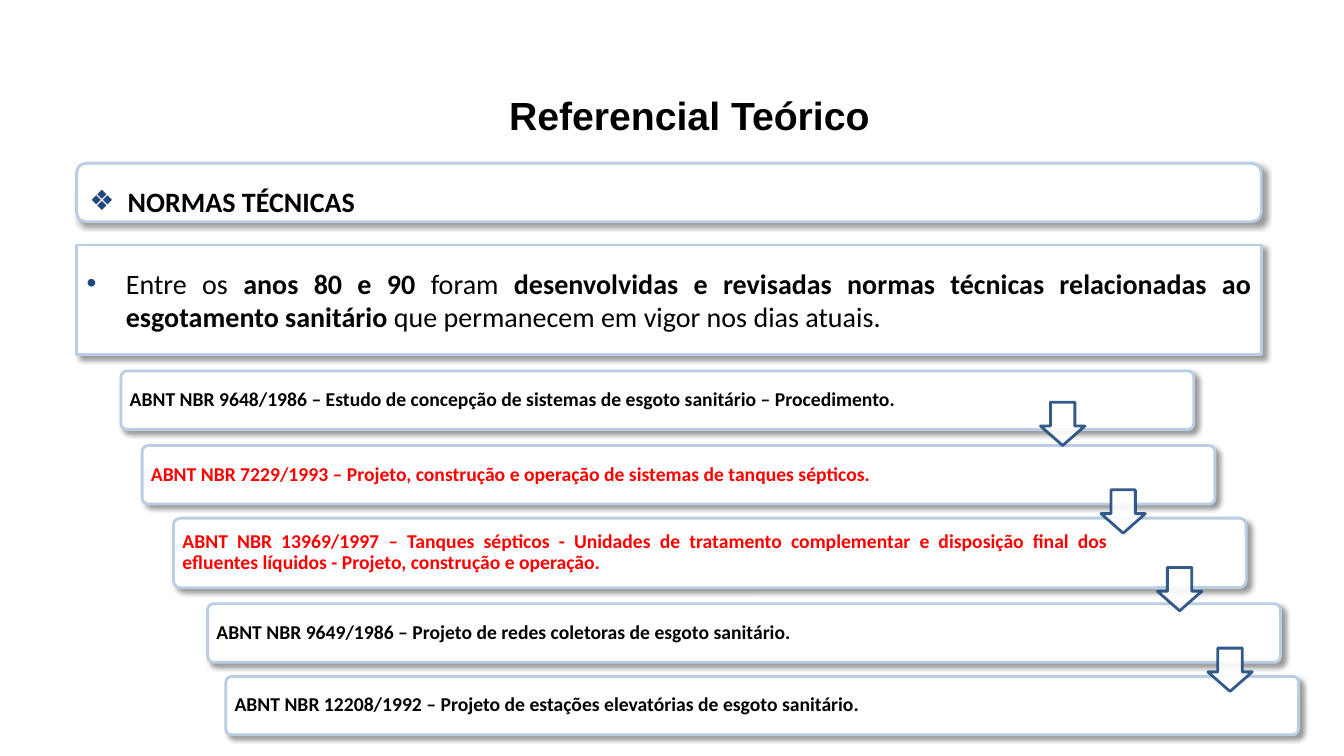
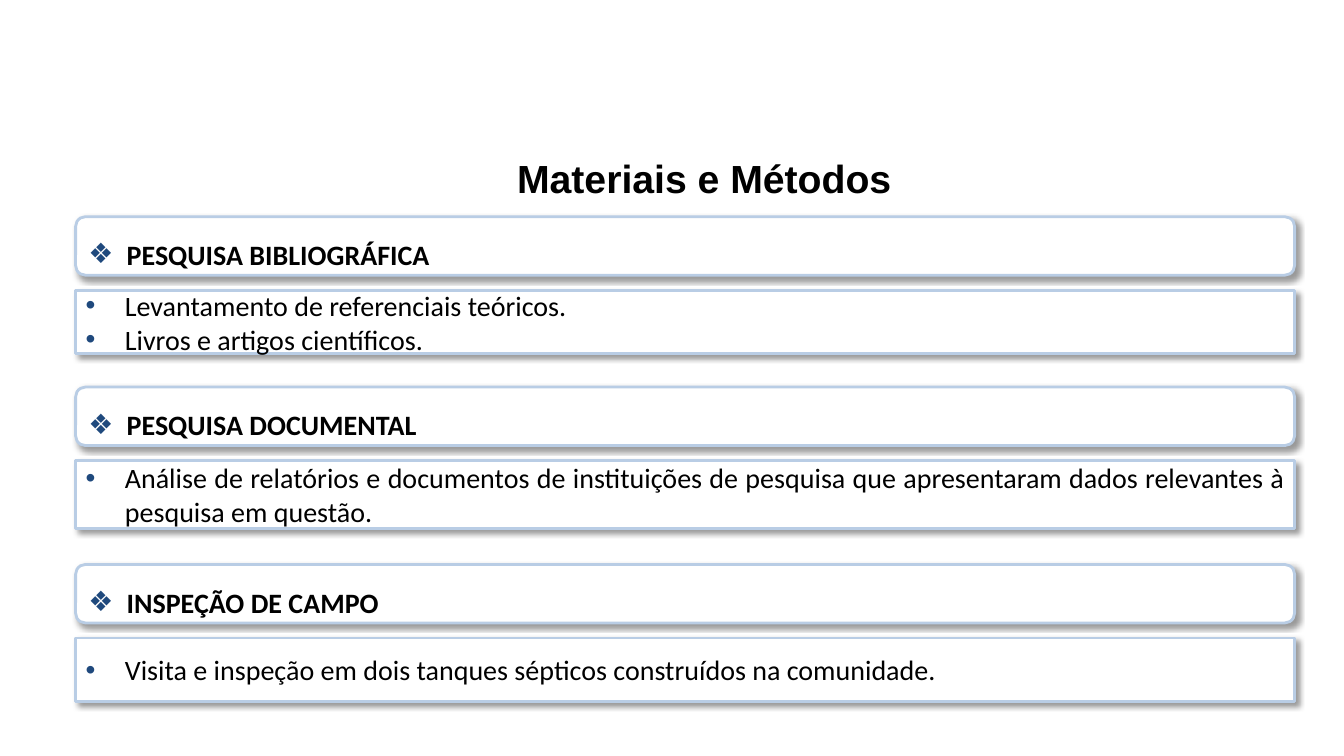
from lxml.etree import SubElement
from pptx import Presentation
from pptx.dml.color import RGBColor
from pptx.enum.shapes import MSO_SHAPE
from pptx.enum.text import MSO_ANCHOR, MSO_AUTO_SIZE, PP_ALIGN
from pptx.oxml.ns import qn
from pptx.util import Inches, Pt

BLACK, WHITE, RED = "000000", "FFFFFF", "FF0000"
NAVY, PALE_BLUE = "1F497D", "B9CDE5"
HEADING_HEIGHT = 0.58
CARD_WIDTH = 10.64

# left, top, height, colour, text
STANDARDS = [
    (1.2, 3.68, 0.58, BLACK,
     "ABNT NBR 9648/1986 – Estudo de concepção de sistemas de esgoto sanitário – Procedimento."),
    (1.41, 4.42, 0.58, RED,
     "ABNT NBR 7229/1993 – Projeto, construção e operação de sistemas de tanques sépticos."),
    (1.72, 5.14, 0.69, RED,
     "ABNT NBR 13969/1997 – Tanques sépticos - Unidades de tratamento complementar e "
     "disposição final dos efluentes líquidos - Projeto, construção e operação."),
    (2.06, 5.99, 0.58, BLACK,
     "ABNT NBR 9649/1986 – Projeto de redes coletoras de esgoto sanitário."),
    (2.24, 6.71, 0.58, BLACK,
     "ABNT NBR 12208/1992 – Projeto de estações elevatórias de esgoto sanitário."),
]
ARROWS = [(10.32, 3.99), (10.92, 4.86), (11.48, 5.63), (11.98, 6.43)]

# top, body height, heading, body paragraphs
METHODS = [
    (2.15, 0.63, "PESQUISA BIBLIOGRÁFICA",
     ["Levantamento de referenciais teóricos.", "Livros e artigos científicos."]),
    (3.84, 0.67, "PESQUISA DOCUMENTAL",
     ["Análise de relatórios e documentos de instituições de pesquisa que "
      "apresentaram dados relevantes à pesquisa em questão."]),
    (5.6, 0.63, "INSPEÇÃO DE CAMPO",
     ["Visita e inspeção em dois tanques sépticos construídos na comunidade."]),
]


def rgb(color):
    return RGBColor.from_string(color)


def set_font(paragraph, size, color=BLACK, bold=False, name="Calibri"):
    font = paragraph.font
    font.name, font.size, font.bold = name, Pt(size), bold
    font.color.rgb = rgb(color)


def set_bullet(paragraph, char, indent):
    properties = paragraph._p.get_or_add_pPr()
    properties.set("marL", str(Inches(indent)))
    properties.set("indent", str(-Inches(indent)))
    bullet_color = SubElement(properties, qn("a:buClr"))
    SubElement(bullet_color, qn("a:srgbClr"), val=NAVY)
    SubElement(properties, qn("a:buFont"), typeface="Arial")
    SubElement(properties, qn("a:buChar"), char=char)


def add_outlined(slide, kind, left, top, width, height, line_color):
    shape = slide.shapes.add_shape(
        kind, Inches(left), Inches(top), Inches(width), Inches(height))
    shape.fill.solid()
    shape.fill.fore_color.rgb = rgb(WHITE)
    shape.line.color.rgb = rgb(line_color)
    shape.line.width = Pt(2)
    shape.shadow.inherit = False
    return shape


def add_panel(slide, kind, left, top, width, height):
    """White panel with a pale blue outline and a soft drop shadow."""
    panel = add_outlined(slide, kind, left, top, width, height, PALE_BLUE)
    effects = panel._element.spPr.find(qn("a:effectLst"))
    shadow = SubElement(effects, qn("a:outerShdw"), blurRad=str(Pt(4)),
                        dist=str(Pt(3)), dir=str(45 * 60000),
                        algn="tl", rotWithShape="0")
    shadow_color = SubElement(shadow, qn("a:srgbClr"), val=BLACK)
    SubElement(shadow_color, qn("a:alpha"), val="40000")
    panel.text_frame.word_wrap = True
    panel.text_frame.vertical_anchor = MSO_ANCHOR.MIDDLE
    return panel


def add_title(slide, left, top, width, text):
    title = slide.shapes.add_textbox(
        Inches(left), Inches(top), Inches(width), Inches(0.57))
    frame = title.text_frame
    frame.word_wrap = False
    frame.auto_size = MSO_AUTO_SIZE.SHAPE_TO_FIT_TEXT
    frame.text = text
    set_font(frame.paragraphs[0], 28, bold=True, name="Arial")


def add_heading(slide, left, top, width, text):
    heading = add_panel(slide, MSO_SHAPE.ROUNDED_RECTANGLE,
                        left, top, width, HEADING_HEIGHT)
    paragraph = heading.text_frame.paragraphs[0]
    paragraph.text = text
    paragraph.alignment = PP_ALIGN.JUSTIFY
    paragraph.line_spacing = 1.5
    set_bullet(paragraph, "❖", 0.38)
    set_font(paragraph, 20, bold=True)


def add_body(slide, left, top, width, height, items):
    """Bulleted panel; each item is a list of (text, bold) pieces."""
    frame = add_panel(slide, MSO_SHAPE.RECTANGLE,
                      left, top, width, height).text_frame
    for index, pieces in enumerate(items):
        paragraph = frame.add_paragraph() if index else frame.paragraphs[0]
        paragraph.alignment = PP_ALIGN.JUSTIFY
        set_bullet(paragraph, "•", 0.39)
        set_font(paragraph, 20)
        for text, bold in pieces:
            run = paragraph.add_run()
            run.text = text
            if bold:
                run.font.bold = True


def add_standard(slide, left, top, height, color, text):
    card = add_panel(slide, MSO_SHAPE.ROUNDED_RECTANGLE,
                     left, top, CARD_WIDTH, height)
    card.adjustments[0] = 0.1
    frame = card.text_frame
    frame.margin_left = Inches(0.07)
    frame.margin_right = Inches(1.35)
    frame.margin_top = frame.margin_bottom = Inches(0.06)
    paragraph = frame.paragraphs[0]
    paragraph.text = text
    paragraph.alignment = PP_ALIGN.JUSTIFY
    paragraph.line_spacing = 0.9
    set_font(paragraph, 14, color, bold=True)


def add_down_arrow(slide, left, top):
    arrow = add_outlined(slide, MSO_SHAPE.DOWN_ARROW,
                         left, top, 0.44, 0.43, NAVY)
    # The preset lists the head length before the shaft width in some tools.
    arrow.adjustments[0] = 0.55
    arrow.adjustments[1] = 0.45
    for color in arrow._element.spPr.iter(qn("a:srgbClr")):
        SubElement(color, qn("a:alpha"), val="90000")


def build_theory(slide):
    left, width = 0.76, 11.75
    add_title(slide, 4.95, 0.86, 3.82, "Referencial Teórico")
    add_body(slide, left, 2.43, width, 1.09, [[
        ("Entre os ", False),
        ("anos 80 e 90 ", True),
        ("foram ", False),
        ("desenvolvidas e revisadas normas técnicas relacionadas ao "
         "esgotamento sanitário", True),
        (" que permanecem em vigor nos dias atuais.", False),
    ]])
    add_heading(slide, left, 1.62, width, "NORMAS TÉCNICAS")
    for standard in STANDARDS:
        add_standard(slide, *standard)
    for left, top in ARROWS:
        add_down_arrow(slide, left, top)


def build_methods(slide):
    left, width = 0.75, 12.09
    add_title(slide, 5.03, 1.48, 4.07, "Materiais e Métodos")
    for top, body_height, heading, lines in METHODS:
        add_heading(slide, left, top, width, heading)
        add_body(slide, left, top + HEADING_HEIGHT + 0.15, width, body_height,
                 [[(line, False)] for line in lines])


def main():
    presentation = Presentation()
    presentation.slide_width = Inches(13.33)
    presentation.slide_height = Inches(7.5)
    blank = presentation.slide_layouts[6]
    for build in (build_theory, build_methods):
        build(presentation.slides.add_slide(blank))
    presentation.save("out.pptx")


if __name__ == "__main__":
    main()
